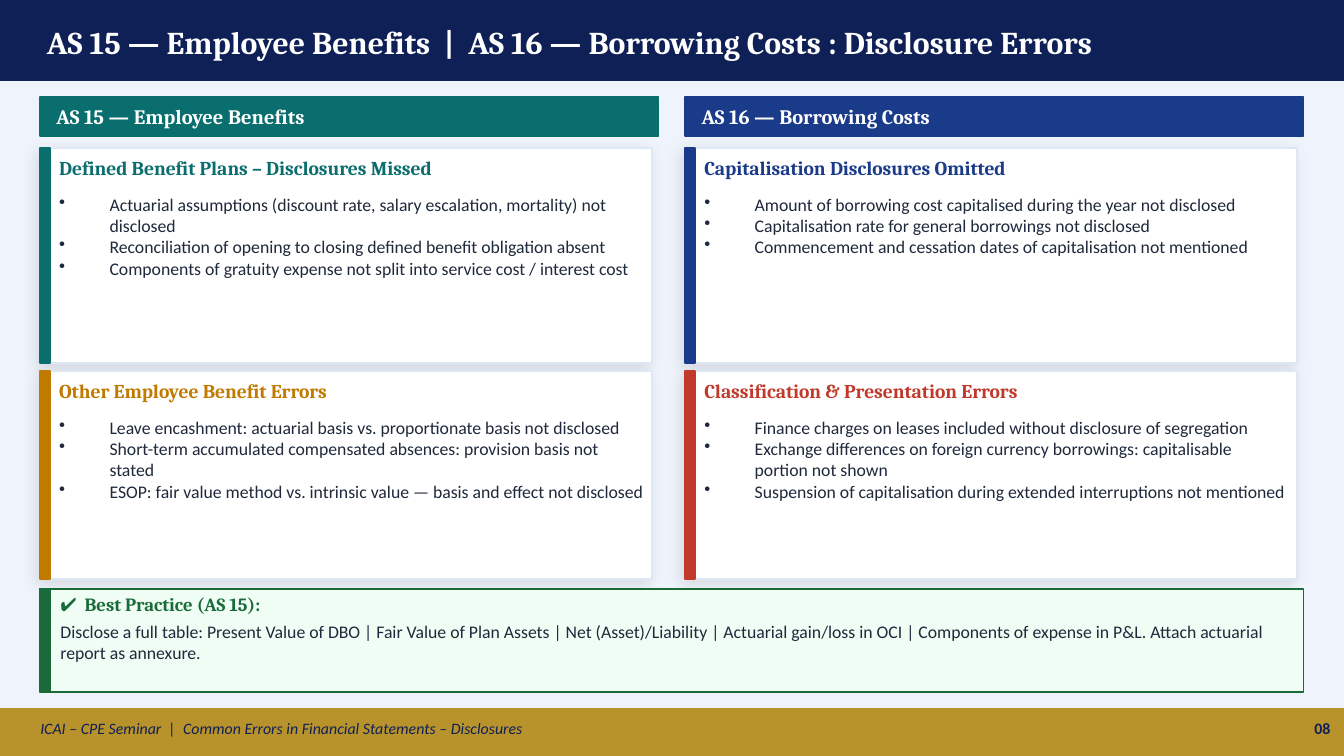
from lxml import etree
from pptx import Presentation
from pptx.dml.color import RGBColor
from pptx.enum import shapes, text
from pptx.oxml import ns
from pptx.util import Inches, Pt

NAVY = RGBColor(0x0F, 0x20, 0x56)
GOLD = RGBColor(0xB8, 0x92, 0x2A)
PALE_BLUE = RGBColor(0xEF, 0xF3, 0xFB)
WHITE = RGBColor(0xFF, 0xFF, 0xFF)
CARD_EDGE = RGBColor(0xDE, 0xE7, 0xF5)
TEAL = RGBColor(0x0A, 0x6E, 0x6E)
BLUE = RGBColor(0x1A, 0x3A, 0x8A)
AMBER = RGBColor(0xC0, 0x7A, 0x00)
RED = RGBColor(0xC0, 0x39, 0x2B)
GREEN = RGBColor(0x1A, 0x6B, 0x3A)
MINT = RGBColor(0xF0, 0xFD, 0xF4)
INK = RGBColor(0x1E, 0x29, 0x3B)

SLIDE_W = 10
SLIDE_H = SLIDE_W * 9 / 16
MARGIN = 0.3
COLUMN_W, COLUMN_STEP = 4.6, 4.8
CARD_W, ACCENT_W = 4.55, 0.07
BULLET_INDENT = Inches(3 / 8)

TITLE = {"name": "Cambria", "size": Pt(17), "bold": True}
BANNER = {"name": "Cambria", "size": Pt(11), "bold": True}
CARD_HEADING = {"name": "Cambria", "size": Pt(10.5), "bold": True}
TIP_HEADING = {"name": "Cambria", "size": Pt(10), "bold": True}
BODY = {"name": "Calibri", "size": Pt(9.5)}
FOOTER = {"name": "Calibri", "size": Pt(8.5), "italic": True}
PAGE_NUMBER = {"name": "Calibri", "size": Pt(8.5), "bold": True}

COLUMNS = [
    ("AS 15 — Employee Benefits", TEAL, [
        ("Defined Benefit Plans – Disclosures Missed", TEAL, [
            "Actuarial assumptions (discount rate, salary escalation, mortality) not disclosed",
            "Reconciliation of opening to closing defined benefit obligation absent",
            "Components of gratuity expense not split into service cost / interest cost"]),
        ("Other Employee Benefit Errors", AMBER, [
            "Leave encashment: actuarial basis vs. proportionate basis not disclosed",
            "Short-term accumulated compensated absences: provision basis not stated",
            "ESOP: fair value method vs. intrinsic value — basis and effect not disclosed"]),
    ]),
    ("AS 16 — Borrowing Costs", BLUE, [
        ("Capitalisation Disclosures Omitted", BLUE, [
            "Amount of borrowing cost capitalised during the year not disclosed",
            "Capitalisation rate for general borrowings not disclosed",
            "Commencement and cessation dates of capitalisation not mentioned"]),
        ("Classification & Presentation Errors", RED, [
            "Finance charges on leases included without disclosure of segregation",
            "Exchange differences on foreign currency borrowings: capitalisable portion not shown",
            "Suspension of capitalisation during extended interruptions not mentioned"]),
    ]),
]
CARD_ROWS = [(1.1, 1.6), (2.76, 1.55)]  # top, height


def add_panel(slide, left, top, width, height, fill, line=None):
    panel = slide.shapes.add_shape(
        shapes.MSO_SHAPE.RECTANGLE, *map(Inches, (left, top, width, height)))
    panel.shadow.inherit = False
    panel.fill.solid()
    panel.fill.fore_color.rgb = fill
    panel.line.color.rgb = line or fill
    panel.line.width = Pt(1)
    return panel


def add_soft_shadow(panel):
    effects = panel._element.spPr.find(ns.qn("a:effectLst"))
    shadow = etree.SubElement(
        effects, ns.qn("a:outerShdw"), blurRad=str(Pt(8)), dist=str(Pt(3)),
        dir=str(135 * 60000), algn="bl", rotWithShape="0")
    color = etree.SubElement(shadow, ns.qn("a:srgbClr"), val="000000")
    etree.SubElement(color, ns.qn("a:alpha"), val="10000")


def add_bullet(paragraph):
    properties = paragraph._p.get_or_add_pPr()
    properties.set("marL", str(BULLET_INDENT))
    properties.set("indent", str(-BULLET_INDENT))
    etree.SubElement(properties, ns.qn("a:buSzPct"), val="100000")
    etree.SubElement(properties, ns.qn("a:buChar"), char="•")


def set_font(font, style, color):
    for key, value in style.items():
        setattr(font, key, value)
    font.color.rgb = color


def add_text(slide, left, top, width, height, lines, style, color,
             middle=False, bulleted=False, align=text.PP_ALIGN.LEFT):
    box = slide.shapes.add_textbox(*map(Inches, (left, top, width, height)))
    frame = box.text_frame
    anchor = text.MSO_ANCHOR.MIDDLE if middle else text.MSO_ANCHOR.TOP
    layout = {"word_wrap": True, "vertical_anchor": anchor, "margin_left": 0,
              "margin_top": 0, "margin_right": 0, "margin_bottom": 0}
    for key, value in layout.items():
        setattr(frame, key, value)
    for index, line in enumerate(lines):
        paragraph = frame.add_paragraph() if index else frame.paragraphs[0]
        if bulleted:
            add_bullet(paragraph)
        paragraph.alignment = align
        run = paragraph.add_run()
        run.text = line
        for font in (paragraph.font, run.font):
            set_font(font, style, color)


def add_title_bar(slide, height):
    add_panel(slide, 0, 0, SLIDE_W, height, NAVY)
    add_text(slide, 0.35, 0.08, 9.3, 0.47,
             ["AS 15 — Employee Benefits  |  AS 16 — Borrowing Costs : Disclosure Errors"],
             TITLE, WHITE, middle=True)


def add_banner(slide, left, top, width, height, heading, color):
    add_panel(slide, left, top, width, height, color)
    add_text(slide, left + 0.12, top + 0.01, width - 0.2, height - 0.02,
             [heading], BANNER, WHITE, middle=True)


def add_card(slide, left, top, width, height, heading, color, errors):
    add_soft_shadow(add_panel(slide, left, top, width, height, WHITE, CARD_EDGE))
    add_panel(slide, left, top, ACCENT_W, height, color)
    text_left, text_width = left + 0.14, width - 0.2
    add_text(slide, text_left, top + 0.06, text_width, 0.26,
             [heading], CARD_HEADING, color)
    add_text(slide, text_left, top + 0.34, text_width, height - 0.42,
             errors, BODY, INK, bulleted=True)


def add_column(slide, left, heading, color, cards):
    add_banner(slide, left, 0.72, COLUMN_W, 0.29, heading, color)
    for (top, height), card in zip(CARD_ROWS, cards):
        add_card(slide, left, top, CARD_W, height, *card)


def add_best_practice(slide, left, top, width, height):
    add_panel(slide, left, top, width, height, MINT, GREEN)
    add_panel(slide, left, top, ACCENT_W, height, GREEN)
    text_left, text_width = left + 0.15, width - 0.3
    add_text(slide, text_left, top + 0.03, text_width, 0.22,
             ["✔  Best Practice (AS 15):"], TIP_HEADING, GREEN)
    add_text(slide, text_left, top + 0.24, text_width, 0.48,
             ["Disclose a full table: Present Value of DBO | Fair Value of Plan Assets | "
              "Net (Asset)/Liability | Actuarial gain/loss in OCI | Components of expense "
              "in P&L. Attach actuarial report as annexure."], BODY, INK)


def add_footer(slide, height):
    top = SLIDE_H - height
    add_panel(slide, 0, top, SLIDE_W, height, GOLD)
    add_text(slide, MARGIN, top + 0.01, 8.8, 0.27,
             ["ICAI – CPE Seminar  |  Common Errors in Financial Statements – Disclosures"],
             FOOTER, NAVY, middle=True)
    add_text(slide, 9.5, top + 0.01, 0.4, 0.27, ["08"], PAGE_NUMBER, NAVY,
             middle=True, align=text.PP_ALIGN.RIGHT)


def main():
    deck = Presentation()
    deck.slide_width, deck.slide_height = Inches(SLIDE_W), Inches(SLIDE_H)
    slide = deck.slides.add_slide(deck.slide_layouts[6])
    add_panel(slide, 0, 0, SLIDE_W, SLIDE_H, PALE_BLUE)
    add_title_bar(slide, 0.6)
    for index, column in enumerate(COLUMNS):
        add_column(slide, MARGIN + index * COLUMN_STEP, *column)
    add_best_practice(slide, MARGIN, 4.38, SLIDE_W - 2 * MARGIN, 0.77)
    add_footer(slide, 0.35)
    deck.save("out.pptx")


if __name__ == "__main__":
    main()
